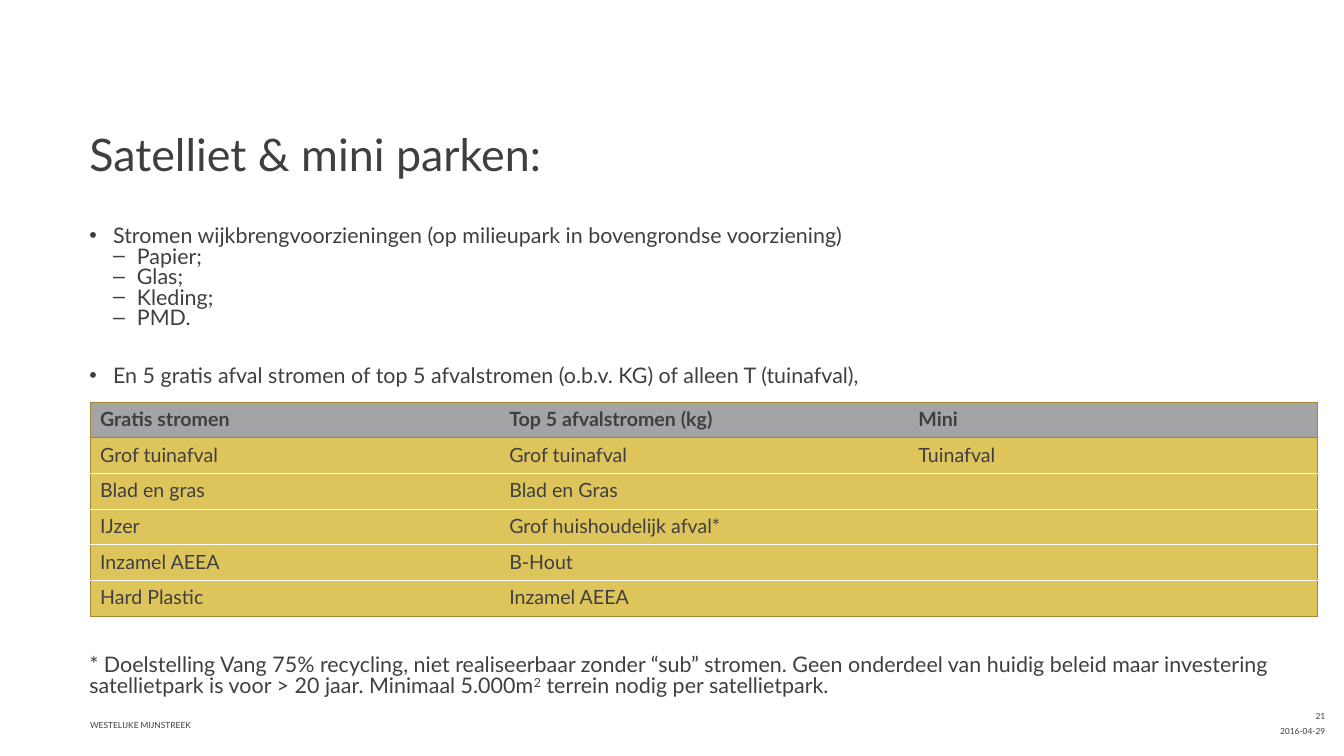
"""Build the slide on satellite and mini recycling parks."""
from dataclasses import dataclass

from lxml.etree import SubElement
from pptx import Presentation
from pptx.dml.color import RGBColor
from pptx.enum.text import MSO_ANCHOR, MSO_AUTO_SIZE, PP_ALIGN
from pptx.oxml.ns import qn
from pptx.util import Cm, Pt


@dataclass(frozen=True)
class Theme:
    font: str = "Lato"
    ink: str = "3F3F42"
    header_fill: str = "A4A4A6"
    row_fill: str = "DEC55B"
    frame: str = "A48730"
    divider: str = "FFFFFF"
    title_size: float = 32
    body_size: float = 15.3
    table_size: float = 14
    footer_size: float = 6


THEME = Theme()
INDENT = Cm(0.6)
LEFT, CONTENT_WIDTH = Cm(2.25), Cm(30.91)
COLUMN_WIDTH, ROW_HEIGHT = Cm(10.31), Cm(0.9)

INTRO = "Stromen wijkbrengvoorzieningen (op milieupark in bovengrondse voorziening)"
STREAMS = ["Papier;", "Glas;", "Kleding;", "PMD."]
CHOICE = "En 5 gratis afval stromen of top 5 afvalstromen (o.b.v. KG) of alleen T (tuinafval),"
FOOTNOTE = (
    "* Doelstelling Vang 75% recycling, niet realiseerbaar zonder “sub” stromen. "
    "Geen onderdeel van huidig beleid maar investering satellietpark is voor > 20 jaar. "
    "Minimaal 5.000m"
)
FOOTNOTE_END = " terrein nodig per satellietpark."
WASTE_ROWS = [
    ("Gratis stromen", "Top 5 afvalstromen (kg)", "Mini"),
    ("Grof tuinafval", "Grof tuinafval", "Tuinafval"),
    ("Blad en gras", "Blad en Gras", ""),
    ("IJzer", "Grof huishoudelijk afval*", ""),
    ("Inzamel AEEA", "B-Hout", ""),
    ("Hard Plastic", "Inzamel AEEA", ""),
]


def add_run(paragraph, text, size, bold=False):
    """Add a run in the theme's font and ink."""
    run = paragraph.add_run()
    run.text = text
    run.font.name = THEME.font
    run.font.size = Pt(size)
    run.font.bold = bold
    run.font.color.rgb = RGBColor.from_string(THEME.ink)
    return run


def prepare_frame(shape, anchor):
    """Give a shape's text no insets, wrapping and a fixed size."""
    frame = shape.text_frame
    frame.margin_left = frame.margin_right = frame.margin_top = frame.margin_bottom = 0
    frame.word_wrap = True
    frame.auto_size = MSO_AUTO_SIZE.NONE
    frame.vertical_anchor = anchor
    return frame


def place(shape, left, top, width, height):
    """Move and size a placeholder."""
    shape.left, shape.top, shape.width, shape.height = left, top, width, height


def fill_title(title):
    """Place and write the title."""
    place(title, LEFT, Cm(2.11), CONTENT_WIDTH, Cm(2.46))
    heading = prepare_frame(title, MSO_ANCHOR.BOTTOM).paragraphs[0]
    heading.alignment = PP_ALIGN.LEFT
    heading.line_spacing = 0.9
    add_run(heading, "Satelliet & mini parken:", THEME.title_size)


def format_body_paragraph(paragraph, bullet=None, level=0, space_before=0):
    """Set the bullet, indent and spacing of a body paragraph."""
    properties = paragraph._p.get_or_add_pPr()
    properties.set("marL", str(INDENT * (level + 1) if bullet else 0))
    properties.set("indent", str(-INDENT if bullet else 0))
    if bullet:
        SubElement(properties, qn("a:buChar")).set("char", bullet)
    else:
        SubElement(properties, qn("a:buNone"))
    paragraph.level = level
    paragraph.alignment = PP_ALIGN.LEFT
    paragraph.line_spacing = 0.8
    paragraph.space_before = Pt(space_before)
    paragraph.space_after = Pt(0)


def fill_body(body):
    """Place and write the list and the footnote below the table."""
    place(body, LEFT, Cm(5.72), CONTENT_WIDTH, Cm(11.96))
    frame = prepare_frame(body, MSO_ANCHOR.TOP)
    items = [(INTRO, "•", 0, 0)]
    items += [(stream, "–", 1, 0) for stream in STREAMS]
    items += [(CHOICE, "•", 0, 26.7), (FOOTNOTE, None, 0, 192)]
    for index, (text, bullet, level, space_before) in enumerate(items):
        paragraph = frame.add_paragraph() if index else frame.paragraphs[0]
        format_body_paragraph(paragraph, bullet, level, space_before)
        add_run(paragraph, text, THEME.body_size)
    square = add_run(paragraph, "2", THEME.body_size)
    square._r.get_or_add_rPr().set("baseline", "30000")
    add_run(paragraph, FOOTNOTE_END, THEME.body_size)


def set_border(cell, side, color=None, width=0.5):
    """Draw one side of a cell, or hide it when no colour is given."""
    line = SubElement(cell._tc.get_or_add_tcPr(), qn(f"a:ln{side}"))
    if color is None:
        SubElement(line, qn("a:noFill"))
        return
    line.set("w", str(Pt(width)))
    fill = SubElement(line, qn("a:solidFill"))
    SubElement(fill, qn("a:srgbClr")).set("val", color)


def add_waste_table(slide):
    """Add the table of waste streams with a framed header and rows."""
    last_row, last_column = len(WASTE_ROWS) - 1, len(WASTE_ROWS[0]) - 1
    table = slide.shapes.add_table(
        last_row + 1, last_column + 1, Cm(2.27), Cm(10.13),
        COLUMN_WIDTH * (last_column + 1), ROW_HEIGHT * (last_row + 1),
    ).table
    table.horz_banding = False
    frame_line, divider_line = (THEME.frame, 0.5), (THEME.divider, 1)
    for column in table.columns:
        column.width = COLUMN_WIDTH
    for row_index, texts in enumerate(WASTE_ROWS):
        table.rows[row_index].height = ROW_HEIGHT
        header = row_index == 0
        for column_index, text in enumerate(texts):
            cell = table.cell(row_index, column_index)
            set_border(cell, "L", THEME.frame if column_index == 0 else None)
            set_border(cell, "R", THEME.frame if column_index == last_column else None)
            set_border(cell, "T", *(frame_line if row_index <= 1 else divider_line))
            set_border(cell, "B", *(frame_line if row_index in (0, last_row) else divider_line))
            cell.fill.solid()
            cell.fill.fore_color.rgb = RGBColor.from_string(
                THEME.header_fill if header else THEME.row_fill)
            paragraph = cell.text_frame.paragraphs[0]
            if text:
                add_run(paragraph, text, THEME.table_size, header)
            else:
                end = SubElement(paragraph._p, qn("a:endParaRPr"))
                end.set("sz", str(int(THEME.table_size * 100)))


def add_footer(slide, text, left, top, width, height, alignment):
    """Add a small bottom-anchored footer text."""
    box = slide.shapes.add_textbox(left, top, width, height)
    paragraph = prepare_frame(box, MSO_ANCHOR.BOTTOM).paragraphs[0]
    paragraph.alignment = alignment
    add_run(paragraph, text, THEME.footer_size)


def main():
    """Build and save the slide."""
    deck = Presentation()
    deck.slide_width, deck.slide_height = Cm(33.87), Cm(19.05)
    slide = deck.slides.add_slide(deck.slide_layouts[1])
    fill_title(slide.shapes.title)
    fill_body(slide.placeholders[1])
    add_waste_table(slide)
    add_footer(slide, "2016-04-29", Cm(25.5), Cm(18.24), Cm(7.9), Cm(0.3), PP_ALIGN.RIGHT)
    add_footer(slide, "WESTELIJKE MIJNSTREEK", Cm(2.27), Cm(17.75), Cm(5.33), Cm(0.66), PP_ALIGN.LEFT)
    add_footer(slide, "21", Cm(25.5), Cm(17.75), Cm(7.9), Cm(0.43), PP_ALIGN.RIGHT)
    deck.save("out.pptx")


if __name__ == "__main__":
    main()
